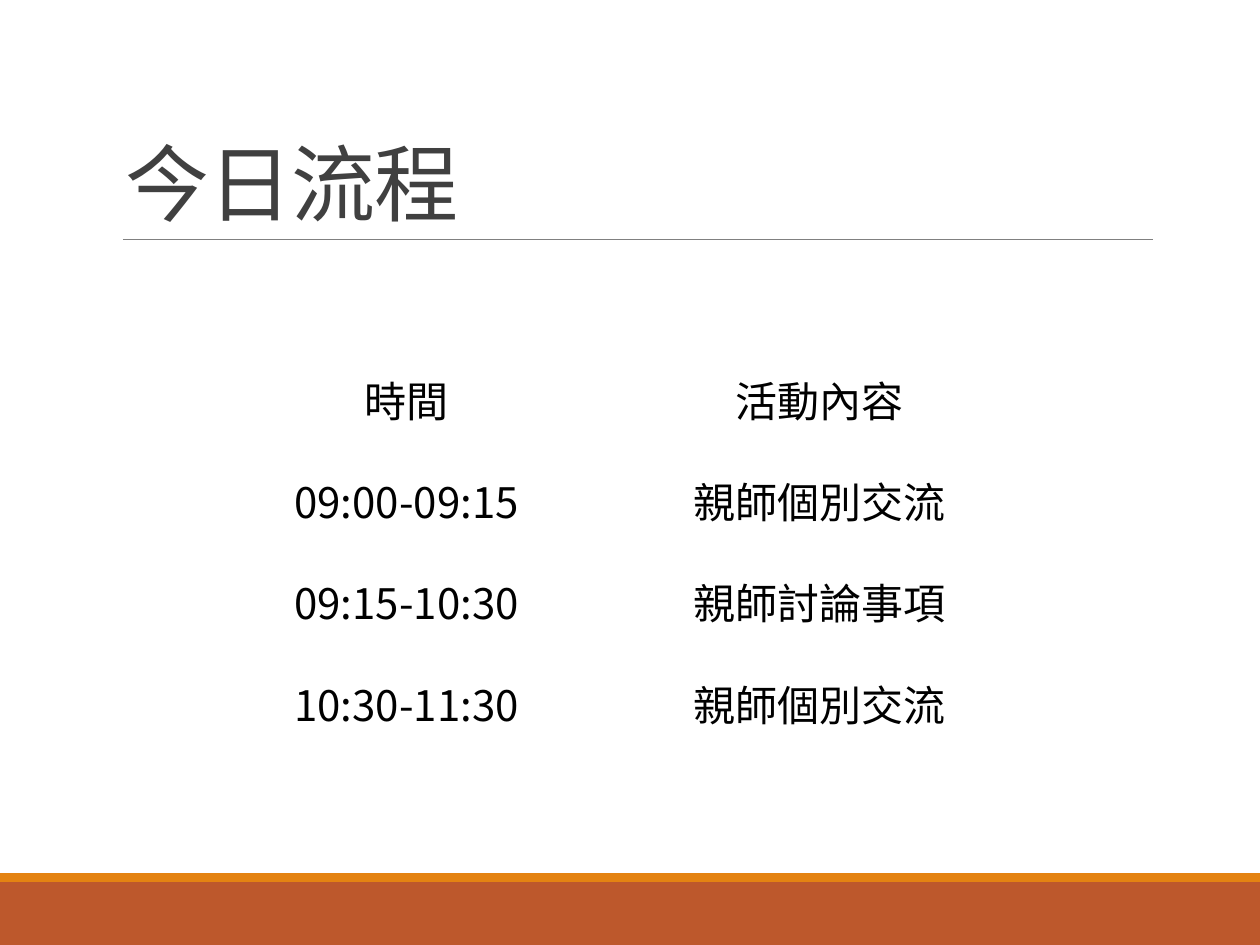
from dataclasses import dataclass

from lxml import etree
from pptx import Presentation
from pptx import util as u
from pptx.dml.color import RGBColor
from pptx.enum import shapes, text
from pptx.oxml import ns

PX_PER_INCH = 126


def px(*lengths):
    return [round(length * u.Inches(1) / PX_PER_INCH) for length in lengths]


@dataclass(frozen=True)
class Theme:
    font: str = "Noto Sans CJK SC"
    title_color: str = "404040"
    body_color: str = "000000"
    rule_color: str = "808080"
    band_color: str = "BD582C"
    stripe_color: str = "E48312"
    title_size: int = 48
    body_size: int = 24
    rule_width: float = 0.5


class SlideBuilder:
    def __init__(self, slide, theme):
        self.slide = slide
        self.theme = theme

    def format_text(self, para, size, color, align, spacing):
        para.alignment = align
        para.line_spacing = spacing
        for span in para.runs:
            span.font.size = u.Pt(size)
            span.font.bold = False
            span.font.name = self.theme.font
            span.font.color.rgb = RGBColor.from_string(color)
            properties = span.font._element
            east_asian = etree.SubElement(properties, ns.qn("a:ea"))
            east_asian.set("typeface", self.theme.font)

    def bar(self, left, top, width, height, color):
        shape = self.slide.shapes.add_shape(
            shapes.MSO_SHAPE.RECTANGLE, *px(left, top, width, height))
        shape.shadow.inherit = False
        shape.fill.solid()
        shape.fill.fore_color.rgb = RGBColor.from_string(color)
        shape.line.fill.background()

    def rule(self, left, right, y):
        line = self.slide.shapes.add_connector(
            shapes.MSO_CONNECTOR.STRAIGHT, *px(left, y, right, y))
        line.line.color.rgb = RGBColor.from_string(self.theme.rule_color)
        line.line.width = u.Pt(self.theme.rule_width)
        etree.SubElement(line._element.spPr, ns.qn("a:effectLst"))

    def title(self, left, top, width, height, wording):
        box = self.slide.shapes.title
        box.left, box.top, box.width, box.height = px(left, top, width, height)
        frame = box.text_frame
        frame.text = wording
        frame.auto_size = text.MSO_AUTO_SIZE.NONE
        frame.vertical_anchor = text.MSO_ANCHOR.BOTTOM
        para = frame.paragraphs[0]
        self.format_text(para, self.theme.title_size, self.theme.title_color,
                         text.PP_ALIGN.LEFT, 0.85)
        para.runs[0].font._element.set("spc", "-50")

    def table(self, left, top, width, row_heights, rows):
        table = self.slide.shapes.add_table(
            len(rows), len(rows[0]),
            *px(left, top, width, sum(row_heights))).table
        table.first_row = table.horz_banding = False
        for row, height, wordings in zip(table.rows, row_heights, rows):
            row.height = px(height)[0]
            for cell, wording in zip(row.cells, wordings):
                cell.fill.background()
                cell.margin_left = cell.margin_right = px(10)[0]
                cell.margin_top = cell.margin_bottom = px(5)[0]
                cell.text_frame.text = wording
                self.format_text(cell.text_frame.paragraphs[0],
                                 self.theme.body_size, self.theme.body_color,
                                 text.PP_ALIGN.CENTER, 1.5)


def main():
    deck = Presentation()
    deck.slide_width, deck.slide_height = px(1260, 945)
    theme = Theme()
    page = SlideBuilder(deck.slides.add_slide(deck.slide_layouts[5]), theme)
    page.bar(0, 882, 1260, 63, theme.band_color)
    page.bar(0, 873, 1260, 9, theme.stripe_color)
    page.rule(123, 1153, 239)
    page.title(113, 39, 1040, 200, "今日流程")
    page.table(200, 333, 826, [84, 84, 84, 160], [
        ("時間", "活動內容"),
        ("09:00-09:15", "親師個別交流"),
        ("09:15-10:30", "親師討論事項"),
        ("10:30-11:30", "親師個別交流"),
    ])
    deck.save("out.pptx")


if __name__ == "__main__":
    main()
